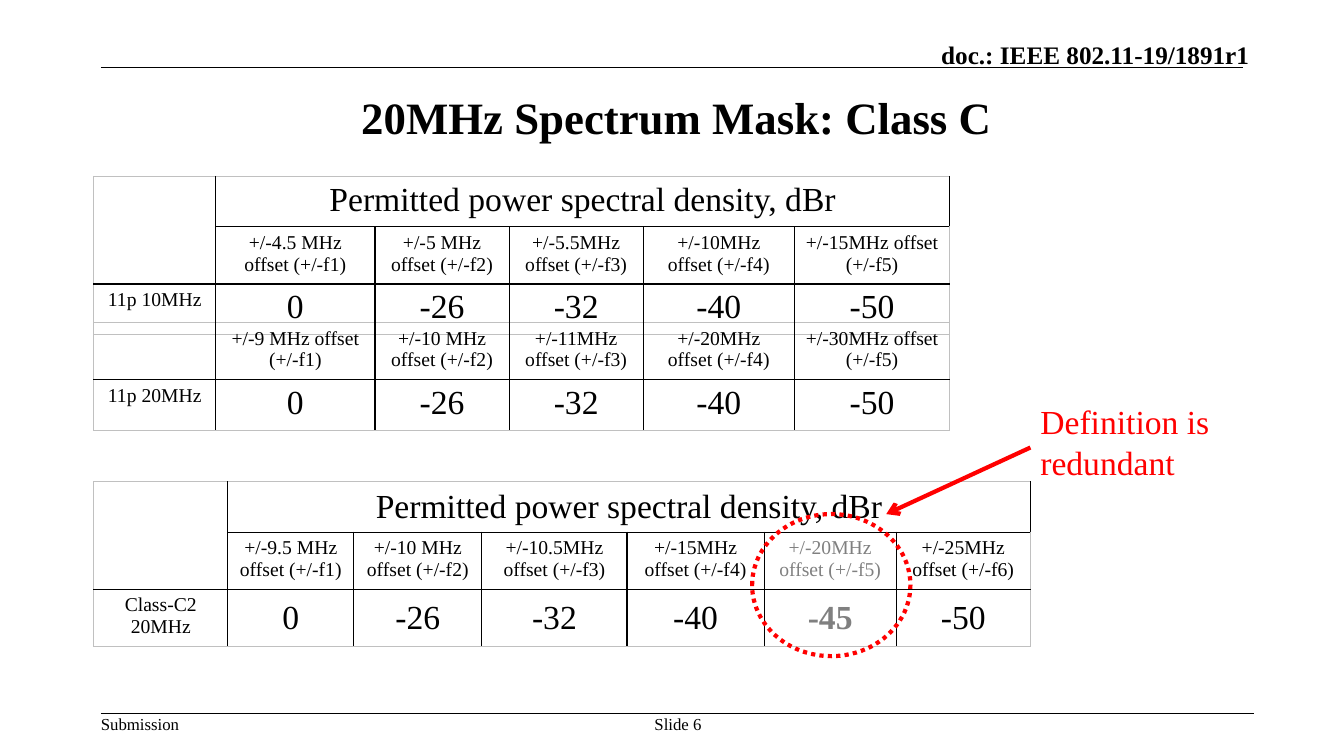
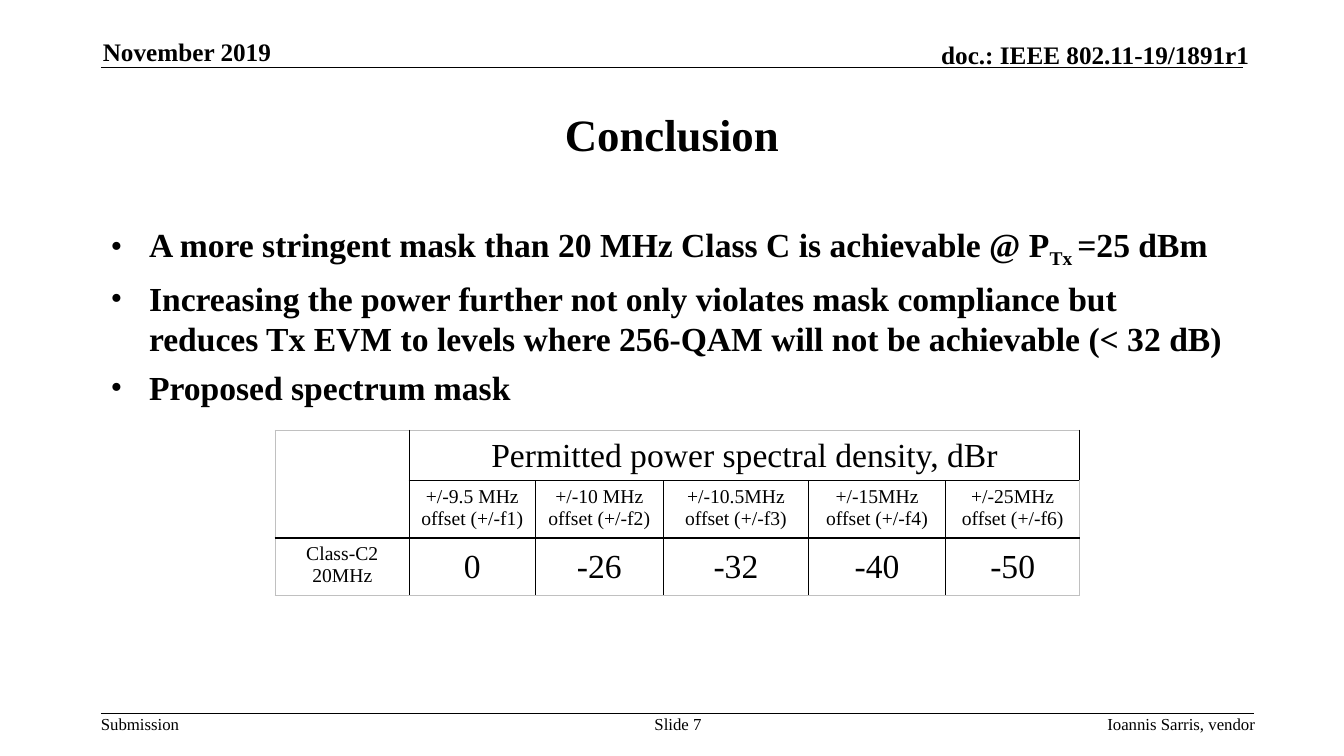
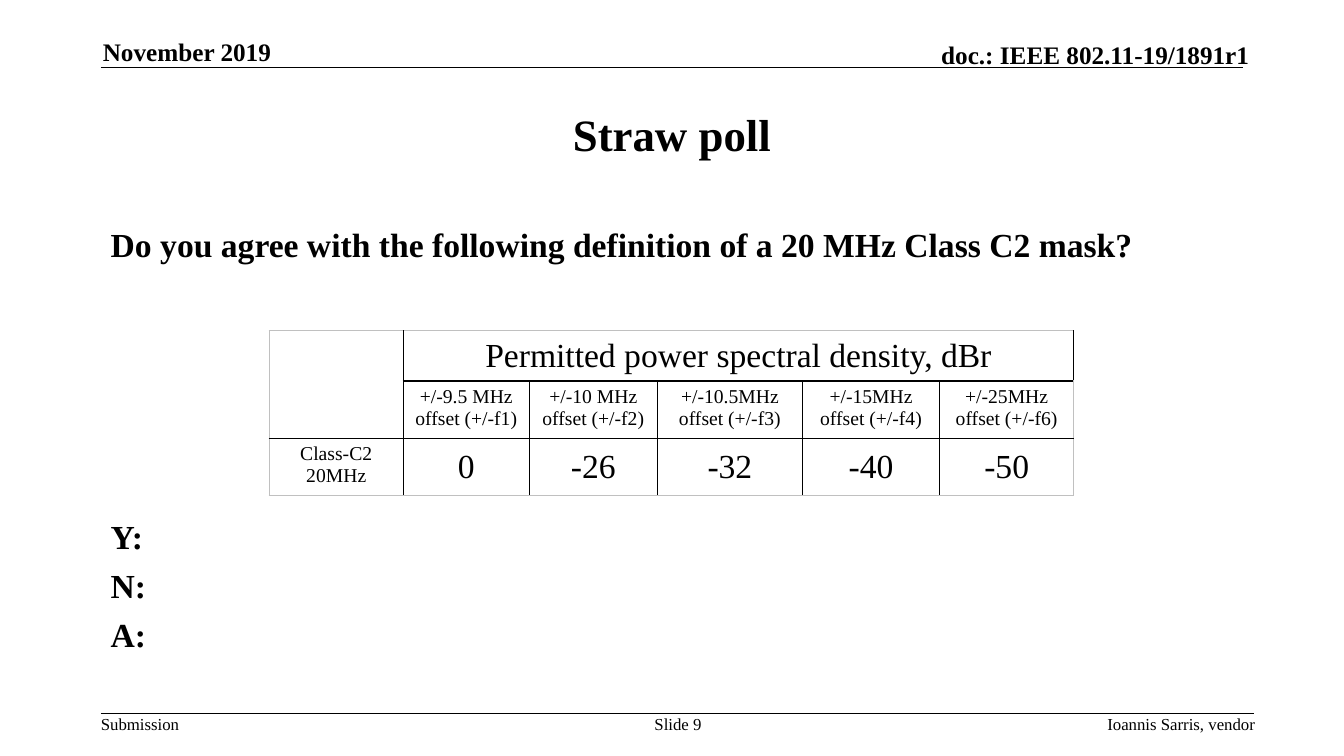
from pptx import Presentation
from pptx.dml.color import RGBColor
from pptx.enum.dml import MSO_LINE
from pptx.enum.shapes import MSO_CONNECTOR as LINK, MSO_SHAPE as SHAPE
from pptx.enum.text import MSO_ANCHOR as ANCHOR, PP_ALIGN as ALIGN
from pptx.oxml.ns import qn
from pptx.util import Inches, Pt
from lxml.etree import SubElement as Sub

FONT = "Times New Roman"
BLACK, GREY, RED, EDGE = "000000", "808080", "FF0000", "C0C0C0"
LEFT, MID, RIGHT = ALIGN.LEFT, ALIGN.CENTER, ALIGN.RIGHT
rgb = RGBColor.from_string


def write(frame, text, size=24, color=BLACK, bold=False, align=LEFT,
          anchor=ANCHOR.TOP, inset=None, gap=0, bullet=False):
    """Fill a text frame or cell, one paragraph a line; |bars| enclose a subscript."""
    frame.vertical_anchor = anchor
    frame.word_wrap = True
    if inset is not None:
        frame.margin_left = frame.margin_right = Inches(inset)
        frame.margin_top = frame.margin_bottom = Inches(inset)
    for n, line in enumerate(text.split("\n")):
        para = frame.add_paragraph() if n else frame.paragraphs[0]
        para.alignment = align
        para.space_before = Pt(gap if n else 0)
        if bullet:
            props = para._p.get_or_add_pPr()
            props.set("marL", str(Inches(0.38)))
            props.set("indent", str(-Inches(0.38)))
            Sub(props, qn("a:buFont"), typeface=FONT)
            Sub(props, qn("a:buChar"), char="•")
        for k, part in enumerate(line.split("|")):
            run = para.add_run()
            run.text = part
            font = run.font
            font.name, font.size, font.bold = FONT, Pt(size), bold
            font.color.rgb = rgb(color)
            if k % 2:
                font._element.set("baseline", "-25000")


def grid(slide, x, y, widths, rows, heights, anchor=ANCHOR.TOP, faded=None):
    """Add a mask table; a first row of two entries spans all value columns."""
    high, wide = len(rows), len(widths)
    table = slide.shapes.add_table(high, wide, Inches(x), Inches(y),
                                   Inches(sum(widths)), Inches(sum(heights))).table
    table.first_row = table.horz_banding = False
    for col, width in zip(table.columns, widths):
        col.width = Inches(width)
    for row, height in zip(table.rows, heights):
        row.height = Inches(height)
    if len(rows[0]) == 2:
        table.cell(0, 0).merge(table.cell(1, 0))
        table.cell(0, 1).merge(table.cell(0, wide - 1))
    for r in range(high):
        for c in range(wide):
            cell = table.cell(r, c)
            props = cell._tc.get_or_add_tcPr()
            outer = {"L": c == 0, "R": c == wide - 1, "T": r == 0, "B": r == high - 1}
            for side, out in outer.items():
                line = Sub(props, qn("a:ln" + side), w=str(Pt(1)))
                fill = Sub(line, qn("a:solidFill"))
                Sub(fill, qn("a:srgbClr"), val=EDGE if out else BLACK)
            cell.fill.background()
            text = rows[r][c] if c < len(rows[r]) else ""
            if not text:
                continue
            small = c == 0 or "offset" in text
            dim = c == faded
            write(cell.text_frame, text, size=14 if small else 24, align=MID,
                  color=GREY if dim else BLACK, bold=dim and not small)
            cell.vertical_anchor = ANCHOR.TOP if small else anchor


HEAD = ["", "Permitted power spectral density, dBr"]
POWER = ["0", "-26", "-32", "-40", "-50"]
WIDE_P = [1.21, 1.58, 1.33, 1.33, 1.5, 1.54]
WIDE_C = [1.33, 1.25, 1.27, 1.44, 1.36, 1.31, 1.33]
HIGH_C = [0.47, 0.53, 0.53]
marks = []
for steps in (["4.5 MHz", "5 MHz", "5.5MHz", "10MHz", "15MHz"],
              ["9 MHz", "10 MHz", "11MHz", "20MHz", "30MHz"],
              ["9.5 MHz", "10 MHz", "10.5MHz", "15MHz", "20MHz", "25MHz"]):
    marks.append([""] + [f"+/-{step} offset (+/-f{n})" for n, step in enumerate(steps, 1)])
mask_10, mask_20, mask_c = marks
full = [HEAD, mask_c, ["Class-C2 20MHz", *POWER[:4], "-45", "-50"]]
short = [HEAD] + [row[:5] + row[6:] for row in full[1:]]
wide_s = WIDE_C[:5] + WIDE_C[6:]

deck = Presentation()
deck.slide_width, deck.slide_height = Inches(13.33), Inches(7.5)

# Titles, headers and footers
slides = []
for title, page, box, dated in [
        ("20MHz Spectrum Mask: Class C", 6, (2.46, 0.58, 8.5, 1.16), False),
        ("Conclusion", 7, (1, 0.75, 11.33, 1.16), True),
        ("Straw poll", 9, (1, 0.75, 11.33, 1.16), True)]:
    slide = deck.slides.add_slide(deck.slide_layouts[5])
    slides.append(slide)
    head = slide.shapes.title
    head.left, head.top, head.width, head.height = map(Inches, box)
    write(head.text_frame, title, size=32, bold=True, align=MID, anchor=ANCHOR.MIDDLE)
    for y, end in [(0.67, 12.33), (7.08, 12.44)]:
        rule = slide.shapes.add_connector(LINK.STRAIGHT, Inches(1), Inches(y),
                                          Inches(end), Inches(y))
        rule.line.color.rgb, rule.line.width = rgb(BLACK), Pt(1)
    top = {"size": 18, "bold": True, "anchor": ANCHOR.BOTTOM}
    notes = [("doc.: IEEE 802.11-19/1891r1", (7.29, 0.39, 5.1, 0.3), RIGHT, top),
             ("Submission", (1, 7.08, 0.79, 0.2), LEFT, {"size": 12}),
             (f"Slide {page}", (6.34, 7.08, 0.77, 0.4), MID, {"size": 12})]
    if dated:
        notes += [("November 2019", (1.02, 0.36, 2.73, 0.3), LEFT, top),
                  ("Ioannis Sarris, vendor", (7.81, 7.08, 4.64, 0.2), RIGHT, {"size": 12})]
    for text, place, align, style in notes:
        note = slide.shapes.add_textbox(*map(Inches, place))
        write(note.text_frame, text, align=align, inset=0, **style)
mask, close, poll = slides

# Spectrum mask
grid(mask, 0.93, 1.75, WIDE_P, [HEAD, mask_10, ["11p 10MHz", *POWER]], [0.47, 0.53, 0.45])
grid(mask, 0.93, 3.2, WIDE_P, [mask_20, ["11p 20MHz", *POWER]], [0.52, 0.47])
grid(mask, 0.93, 4.78, WIDE_C, full, HIGH_C, ANCHOR.MIDDLE, faded=5)
ring = mask.shapes.add_shape(SHAPE.OVAL, Inches(7.46), Inches(5.1), Inches(1.57), Inches(1.41))
ring.shadow.inherit = False
ring.fill.background()
ring.line.dash_style = MSO_LINE.ROUND_DOT
call = mask.shapes.add_textbox(Inches(10.22), Inches(3.93), Inches(2.59), Inches(1.02))
write(call.text_frame, "Definition is redundant", color=RED)
arrow = mask.shapes.add_connector(LINK.STRAIGHT, Inches(10.22), Inches(4.44),
                                  Inches(8.79), Inches(5.1))
arrow.begin_connect(call, 1)
for shape in (ring, arrow):
    shape.line.color.rgb, shape.line.width = rgb(RED), Pt(3)
Sub(arrow.line._get_or_add_ln(), qn("a:tailEnd"), type="arrow")

# Conclusion
body = close.shapes.add_textbox(Inches(1), Inches(2.17), Inches(11.33), Inches(2))
write(body.text_frame,
      "A more stringent mask than 20 MHz Class C is achievable @ P|Tx |=25 dBm\n"
      "Increasing the power further not only violates mask compliance but reduces "
      "Tx EVM to levels where 256-QAM will not be achievable (< 32 dB)\n"
      "Proposed spectrum mask", bold=True, gap=6, bullet=True)
grid(close, 2.73, 4.27, wide_s, short, HIGH_C, ANCHOR.MIDDLE)

# Straw poll
for text, y, height in [
        ("Do you agree with the following definition of a 20 MHz Class C2 mask?", 2.17, 0.5),
        ("Y:\nN:\nA:", 5.07, 1.5)]:
    body = poll.shapes.add_textbox(Inches(1), Inches(y), Inches(11.33), Inches(height))
    write(body.text_frame, text, bold=True, gap=6)
grid(poll, 2.67, 3.28, wide_s, short, HIGH_C, ANCHOR.MIDDLE)

# Connectors carry no shadow
for slide in slides:
    for link in slide.element.iter(qn("p:cxnSp")):
        Sub(link.spPr, qn("a:effectLst"))

deck.save("out.pptx")
